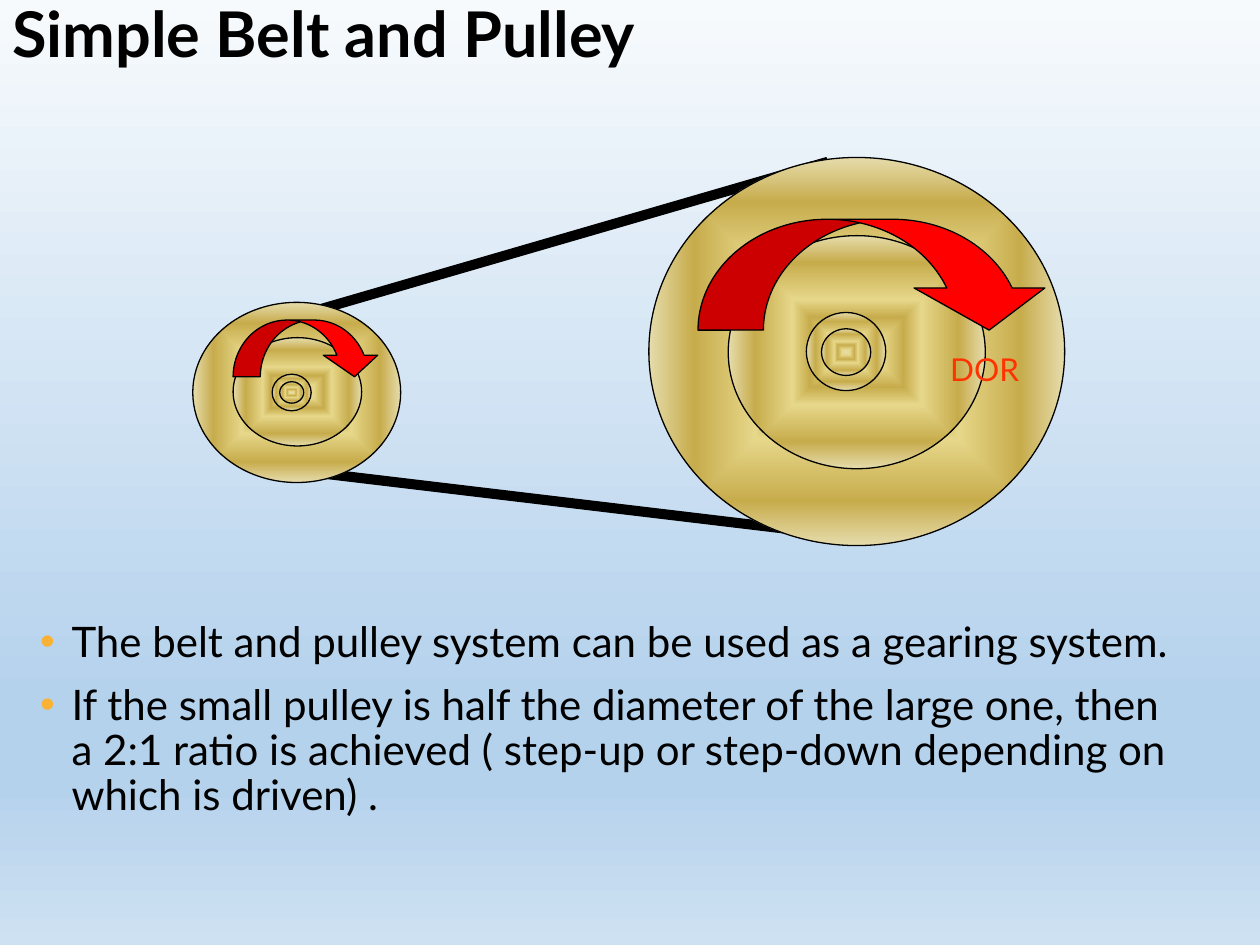
"""Build the slide on a simple belt and pulley."""
from pptx import Presentation
from pptx.dml.color import RGBColor
from pptx.enum.shapes import MSO_SHAPE as Shape
from pptx.enum.text import MSO_ANCHOR as Anchor, MSO_AUTO_SIZE as AutoSize, PP_ALIGN as Align
from pptx.oxml import parse_xml
from pptx.oxml.ns import nsdecls, qn
from pptx.util import Inches, Pt

COLORS = {
    "black": "000000", "arrow": "FF0000", "label": "FF3300", "bullet": "F9B233",
    "sky_top": "F7FAFD", "sky": "B5D2EC", "sky_base": "CEE1F2",
    "brass_pale": "E6DCAC", "brass_light": "E6D78A", "brass_dark": "C7AC4C",
}
SKY = [(0, "sky_top"), (74, "sky"), (83, "sky"), (100, "sky_base")]
BRASS = [(0, "brass_pale"), (12, "brass_light"), (30, "brass_dark"),
         (45, "brass_light"), (77, "brass_dark"), (100, "brass_pale")]
DOWNWARD = '<a:lin {} ang="5400000" scaled="0"/>'
OUTWARD = '<a:path {} path="shape"><a:fillToRect l="50000" t="50000" r="50000" b="50000"/></a:path>'


def set_gradient(fill, owner, stops, direction):
    fill.gradient()
    gradient = owner.find(".//" + qn("a:gradFill"))
    for child in list(gradient):
        gradient.remove(child)
    stop_xml = "".join(
        f'<a:gs pos="{position * 1000}"><a:srgbClr val="{COLORS[color]}"/></a:gs>'
        for position, color in stops)
    gradient.append(parse_xml(f'<a:gsLst {nsdecls("a")}>{stop_xml}</a:gsLst>'))
    gradient.append(parse_xml(direction.format(nsdecls("a"))))


presentation = Presentation()
presentation.slide_width, presentation.slide_height = Inches(10), Inches(7.5)
slide = presentation.slides.add_slide(presentation.slide_layouts[6])
set_gradient(slide.background.fill, slide.element, SKY, DOWNWARD)

belts = [(Shape.RECTANGLE, (left, top, 4.66, 0.07), angle, "black", ())
         for left, top, angle in [(2, 1.9, 343.8), (2.3, 3.97, 6.8)]]
pulley_rings = [(Shape.OVAL, box, 0, None, ()) for box in [
    (1.53, 2.4, 1.65, 1.43), (1.85, 2.68, 1.02, 0.86),
    (2.16, 2.97, 0.31, 0.29), (2.22, 3.03, 0.19, 0.17),
    (5.15, 1.25, 3.3, 3.08), (5.78, 1.87, 2.04, 1.85),
    (6.4, 2.48, 0.63, 0.62), (6.52, 2.61, 0.39, 0.37)]]
rotation_arrows = [(Shape.CURVED_DOWN_ARROW, box, 0, "arrow", (width, 2 * width, 0.38))
                   for box, width in [((5.54, 1.74, 2.83, 0.88), 0.59),
                                      ((1.85, 2.54, 1.18, 0.45), 0.48)]]

for kind, box, angle, color, adjustments in belts + pulley_rings + rotation_arrows:
    shape = slide.shapes.add_shape(kind, *map(Inches, box))
    shape.shadow.inherit = False
    shape.rotation = angle
    for index, value in enumerate(adjustments):
        shape.adjustments[index] = value
    if color:
        shape.fill.solid()
        shape.fill.fore_color.rgb = RGBColor.from_string(COLORS[color])
    else:
        set_gradient(shape.fill, shape.element, BRASS, OUTWARD)
    shape.line.color.rgb = RGBColor.from_string(COLORS["black"])
    shape.line.width = Pt(0.75)

texts = [
    ((0, -0.04, 10, 0.67), ["Simple Belt and Pulley"], "black", False,
     {"word_wrap": True, "vertical_anchor": Anchor.MIDDLE},
     {"line_spacing": 0.9}, {"size": Pt(36), "bold": True}),
    ((0.22, 4.88, 9.27, 2.54),
     ["The belt and pulley system can be used as a gearing system.",
      "If the small pulley is half the diameter of the large one, then a 2:1 ratio is "
      "achieved ( step-up or step-down depending on which is driven) ."], "black", True,
     {"word_wrap": True}, {"line_spacing": 0.9}, {"size": Pt(24)}),
    ((7.38, 2.73, 0.87, 0.5), ["DOR"], "label", False,
     {"word_wrap": False, "auto_size": AutoSize.SHAPE_TO_FIT_TEXT},
     {"alignment": Align.CENTER}, {"size": Pt(18)}),
]
for box, lines, color, bulleted, frame_format, paragraph_format, font_format in texts:
    frame = slide.shapes.add_textbox(*map(Inches, box)).text_frame
    for name, value in frame_format.items():
        setattr(frame, name, value)
    for index, line in enumerate(lines):
        paragraph = frame.paragraphs[0] if index == 0 else frame.add_paragraph()
        paragraph.text = line
        for name, value in paragraph_format.items():
            setattr(paragraph, name, value)
        if index:
            paragraph.space_before = Pt(10)
        if bulleted:
            properties = paragraph._p.get_or_add_pPr()
            properties.set("marL", str(Inches(0.25)))
            properties.set("indent", str(Inches(-0.25)))
            properties.append(parse_xml(
                f'<a:buClr {nsdecls("a")}><a:srgbClr val="{COLORS["bullet"]}"/></a:buClr>'))
            properties.append(parse_xml(f'<a:buFont {nsdecls("a")} typeface="Arial"/>'))
            properties.append(parse_xml(f'<a:buChar {nsdecls("a")} char="•"/>'))
        font = paragraph.runs[0].font
        font.name = "Lato"
        font.color.rgb = RGBColor.from_string(COLORS[color])
        for name, value in font_format.items():
            setattr(font, name, value)

presentation.save("out.pptx")
